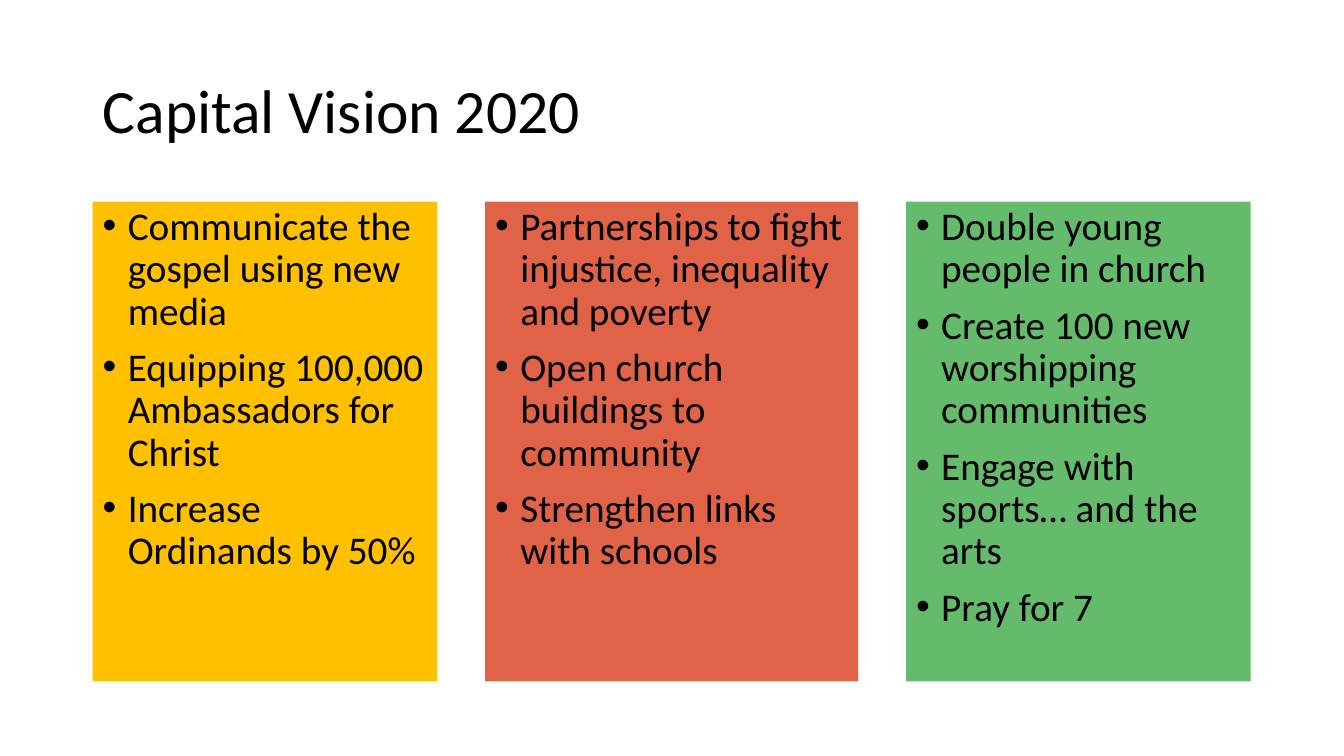
from lxml import etree
from pptx import Presentation
from pptx.dml.color import RGBColor
from pptx.enum.shapes import MSO_SHAPE
from pptx.enum.text import MSO_ANCHOR, PP_ALIGN
from pptx.oxml.ns import qn
from pptx.util import Pt

RECTANGLE = MSO_SHAPE.RECTANGLE
TOP, MIDDLE = MSO_ANCHOR.TOP, MSO_ANCHOR.MIDDLE
LEFT = PP_ALIGN.LEFT
TITLE_ONLY = 5
FONT, BLACK = "Calibri", "000000"
MARGIN, PANEL_GAP = 66.2, 34.2
PANEL_TOP, PANEL_HEIGHT = 144, 342.7
BULLET_INDENT = 18

PANELS = [
    (246.2, "FFC000", [
        "Communicate the gospel using new media",
        "Equipping 100,000 Ambassadors for Christ",
        "Increase Ordinands by 50%",
    ]),
    (266.4, "E06347", [
        "Partnerships to fight injustice, inequality and poverty",
        "Open church buildings to community",
        "Strengthen links with schools",
    ]),
    (246.2, "63BB6B", [
        "Double young people in church",
        "Create 100 new worshipping communities",
        "Engage with sports… and the arts",
        "Pray for 7",
    ]),
]


def colour(value):
    """Return the colour for a hex string."""
    return RGBColor.from_string(value)


def format_paragraph(paragraph, size):
    """Apply the shared alignment, line spacing and font."""
    paragraph.alignment = LEFT
    paragraph.line_spacing = 0.9
    paragraph.font.name = FONT
    paragraph.font.size = Pt(size)
    paragraph.font.color.rgb = colour(BLACK)


def add_bullet(paragraph):
    """Give a paragraph a hanging round bullet."""
    properties = paragraph._p.get_or_add_pPr()
    properties.set("marL", str(Pt(BULLET_INDENT)))
    properties.set("indent", str(-Pt(BULLET_INDENT)))
    etree.SubElement(properties, qn("a:buFont"), typeface="Arial")
    etree.SubElement(properties, qn("a:buChar"), char="•")


def set_title(slide, text):
    """Place and format the title placeholder."""
    title = slide.shapes.title
    title.left, title.top = Pt(MARGIN), Pt(28.8)
    title.width, title.height = Pt(828), Pt(104.4)
    title.text_frame.text = text
    title.text_frame.vertical_anchor = MIDDLE
    format_paragraph(title.text_frame.paragraphs[0], 44)


def add_panel(slide, left, width, fill, items):
    """Add a coloured panel holding a bulleted list."""
    panel = slide.shapes.add_shape(
        RECTANGLE, Pt(left), Pt(PANEL_TOP), Pt(width), Pt(PANEL_HEIGHT))
    panel.shadow.inherit = False
    panel.fill.solid()
    panel.fill.fore_color.rgb = colour(fill)
    panel.line.fill.background()
    frame = panel.text_frame
    frame.word_wrap = True
    frame.vertical_anchor = TOP
    frame.text = "\n".join(items)
    for paragraph in frame.paragraphs:
        paragraph.space_before = Pt(10)
        add_bullet(paragraph)
        format_paragraph(paragraph, 28)


def main():
    """Build and save the slide."""
    presentation = Presentation()
    presentation.slide_width, presentation.slide_height = Pt(960), Pt(540)
    slide = presentation.slides.add_slide(presentation.slide_layouts[TITLE_ONLY])
    set_title(slide, "Capital Vision 2020")
    left = MARGIN
    for width, fill, items in PANELS:
        add_panel(slide, left, width, fill, items)
        left += width + PANEL_GAP
    presentation.save("out.pptx")


if __name__ == "__main__":
    main()
